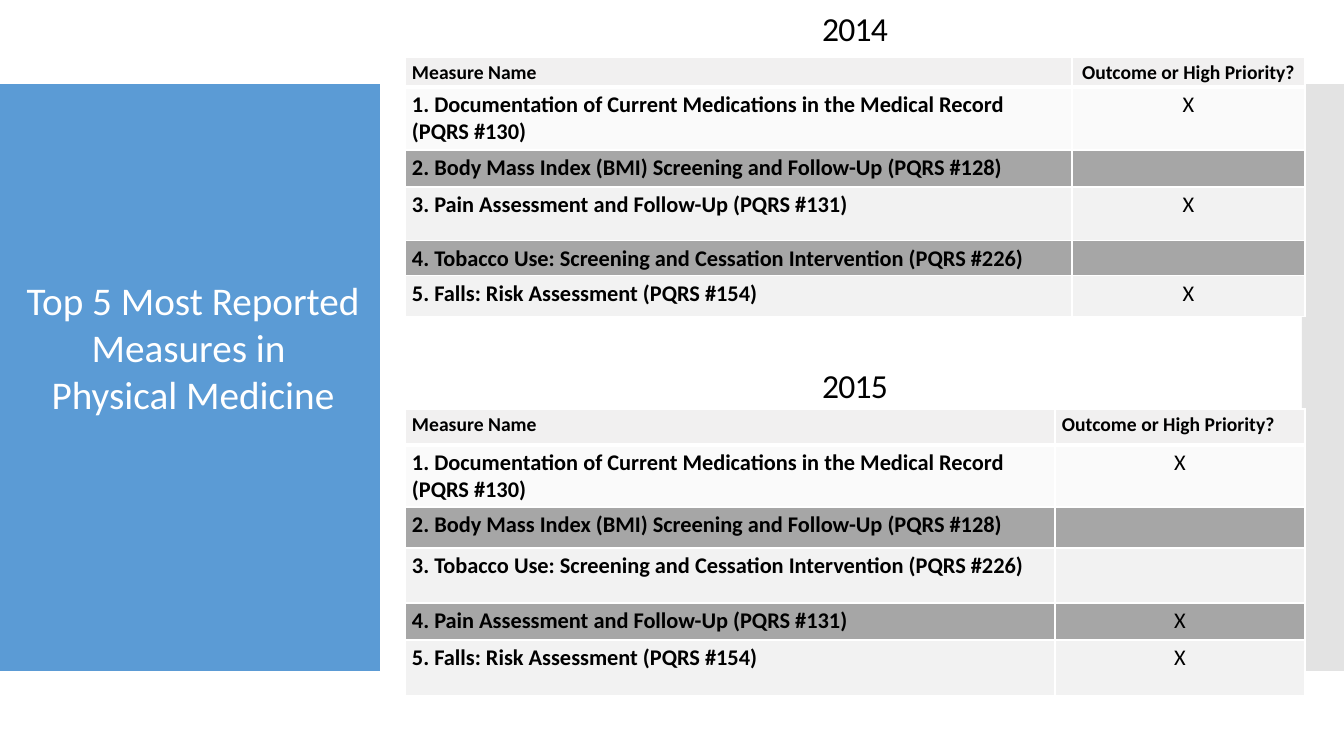
from lxml import etree
from pptx import Presentation
from pptx.dml.color import RGBColor
from pptx.enum.shapes import MSO_SHAPE
from pptx.enum.text import MSO_ANCHOR, MSO_AUTO_SIZE, PP_ALIGN
from pptx.oxml.ns import qn
from pptx.util import Pt

FONT = "Calibri"
BLACK, WHITE = "000000", "FFFFFF"
HEADER_FILL = "F1F0F0"
ROW_FILLS = ["FAFAFA", "A6A6A6", "F2F2F2", "A6A6A6", "F2F2F2"]
TOPIC = ["Top 5 Most Reported Measures in ", "Physical Medicine"]
HEADINGS = ["Measure Name", "Outcome or High Priority?"]
DOCUMENTATION = "Documentation of Current Medications in the Medical Record (PQRS #130)"
BODY_MASS = "Body Mass Index (BMI) Screening and Follow-Up (PQRS #128)"
PAIN = "Pain Assessment and Follow-Up (PQRS #131)"
TOBACCO = "Tobacco Use: Screening and Cessation Intervention (PQRS #226)"
FALLS = "Falls: Risk Assessment (PQRS #154)"
PRIORITY = {DOCUMENTATION, PAIN, FALLS}
YEARS = [
    {"year": "2014", "heading_top": 10, "table_top": 57,
     "columns": [667, 233], "rows": [30, 63, 37, 54, 35, 41],
     "heading_align": PP_ALIGN.CENTER,
     "measures": [DOCUMENTATION, BODY_MASS, PAIN, TOBACCO, FALLS]},
    {"year": "2015", "heading_top": 367, "table_top": 409,
     "columns": [650, 250], "rows": [36, 62, 41, 55, 37, 56],
     "heading_align": PP_ALIGN.LEFT,
     "measures": [DOCUMENTATION, BODY_MASS, TOBACCO, PAIN, FALLS]},
]


def px(length):
    return round(length * 914400 / 100.8)


def color(value):
    return RGBColor.from_string(value)


def add_run(paragraph, text, size, fill, bold=False):
    run = paragraph.add_run()
    run.text = text
    run.font.name = FONT
    run.font.size = Pt(size)
    run.font.bold = bold
    run.font.color.rgb = color(fill)
    return run


def place(shape, left, top, width, height):
    shape.left, shape.top = px(left), px(top)
    shape.width, shape.height = px(width), px(height)


def add_panel(slide, left, width, fill):
    shape = slide.shapes.add_shape(
        MSO_SHAPE.RECTANGLE, px(left), px(84), px(width), px(587))
    shape.shadow.inherit = False
    shape.fill.solid()
    shape.fill.fore_color.rgb = color(fill)
    shape.line.fill.background()
    return shape


def fill_year(shape, year, top):
    place(shape, 494, top, 722, 42)
    frame = shape.text_frame
    frame.auto_size = MSO_AUTO_SIZE.NONE
    frame.word_wrap = True
    frame.vertical_anchor = MSO_ANCHOR.MIDDLE
    paragraph = frame.paragraphs[0]
    paragraph.alignment = PP_ALIGN.CENTER
    paragraph.line_spacing = 0.9
    run = add_run(paragraph, year, 24, BLACK)
    run._r.get_or_add_rPr().set("spc", "-60")


def add_borders(cell, bottom):
    properties = cell._tc.get_or_add_tcPr()
    for side, width in (("L", 1), ("R", 1), ("T", 1), ("B", bottom)):
        line = etree.SubElement(properties, qn(f"a:ln{side}"), w=str(Pt(width)))
        fill = etree.SubElement(line, qn("a:solidFill"))
        etree.SubElement(fill, qn("a:srgbClr"), val=WHITE)


def fill_cell(cell, text, size, bold, align, fill, bottom):
    add_borders(cell, bottom)
    cell.fill.solid()
    cell.fill.fore_color.rgb = color(fill)
    cell.margin_left = cell.margin_right = px(7)
    cell.margin_top = px(4 if text else 0)
    cell.margin_bottom = px(2 if text else 0)
    if text:
        paragraph = cell.text_frame.paragraphs[0]
        paragraph.alignment = align
        add_run(paragraph, text, size, BLACK, bold)


def add_measures(slide, data):
    rows, columns = data["rows"], data["columns"]
    table = slide.shapes.add_table(
        len(rows), len(columns), px(405), px(data["table_top"]),
        px(sum(columns)), px(sum(rows))).table
    for column, width in zip(table.columns, columns):
        column.width = px(width)
    for row, height in zip(table.rows, rows):
        row.height = px(height)
    aligns = [PP_ALIGN.LEFT, data["heading_align"]]
    for index, heading in enumerate(HEADINGS):
        fill_cell(table.cell(0, index), heading, 14, True, aligns[index], HEADER_FILL, 3)
    for rank, (measure, fill) in enumerate(zip(data["measures"], ROW_FILLS), 1):
        mark = "X" if measure in PRIORITY else ""
        fill_cell(table.cell(rank, 0), f"{rank}. {measure}", 16, True,
                  PP_ALIGN.LEFT, fill, 1)
        fill_cell(table.cell(rank, 1), mark, 16, False, PP_ALIGN.CENTER, fill, 1)


def add_topic(slide):
    frame = slide.shapes.add_textbox(px(0), px(276), px(386), px(146)).text_frame
    frame.word_wrap = True
    frame.vertical_anchor = MSO_ANCHOR.BOTTOM
    for index, text in enumerate(TOPIC):
        paragraph = frame.add_paragraph() if index else frame.paragraphs[0]
        paragraph.alignment = PP_ALIGN.CENTER
        add_run(paragraph, text, 28, WHITE)


def main():
    presentation = Presentation()
    presentation.slide_width, presentation.slide_height = px(1344), px(756)
    slide = presentation.slides.add_slide(presentation.slide_layouts[5])
    add_panel(slide, 0, 380, "5B9BD5")
    side_bar = add_panel(slide, 1302, 42, "C8C8C8")
    bar_color = side_bar.fill._xPr.find(".//" + qn("a:srgbClr"))
    etree.SubElement(bar_color, qn("a:alpha"), val="50000")
    add_topic(slide)
    for index, data in enumerate(YEARS):
        heading = slide.shapes.add_textbox(0, 0, 0, 0) if index else slide.shapes.title
        fill_year(heading, data["year"], data["heading_top"])
        add_measures(slide, data)
    presentation.save("out.pptx")


if __name__ == "__main__":
    main()
